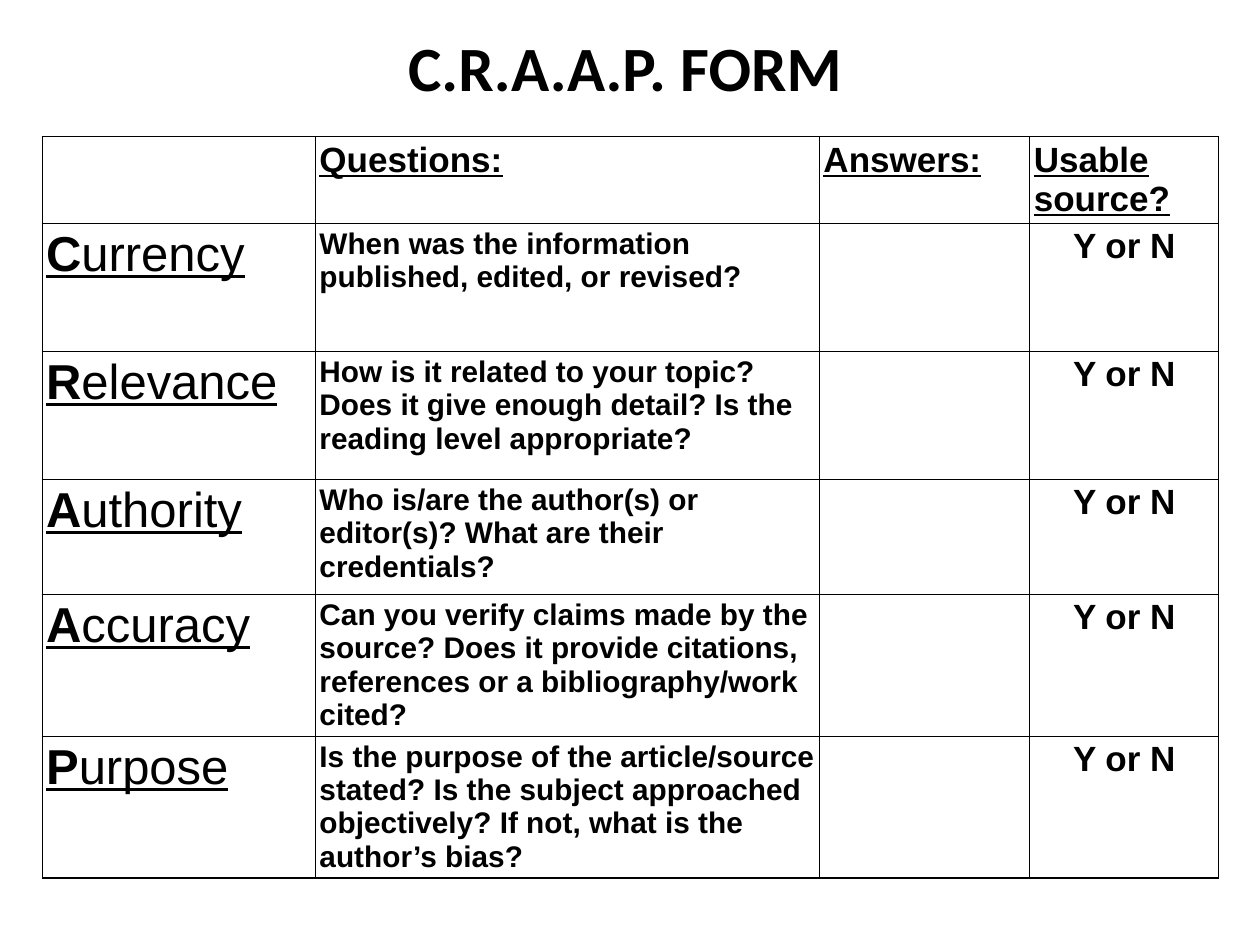
from lxml.etree import SubElement
from pptx import Presentation
from pptx.dml.color import RGBColor
from pptx.enum.text import MSO_ANCHOR, PP_ALIGN
from pptx.oxml.ns import qn
from pptx.util import Cm, Pt

BLACK = RGBColor(0x00, 0x00, 0x00)

TITLE = dict(name="Calibri", size=Pt(36), bold=True, underline=False)
HEADER = dict(name="Arial", size=Pt(20), bold=True, underline=True)
INITIAL = dict(HEADER, size=Pt(28))
REST = dict(INITIAL, bold=False)
QUESTION = dict(HEADER, size=Pt(17), underline=False)
CHOICE = dict(HEADER, underline=False)

COLS = (5.51, 10.16, 4.24, 3.81)
ROWS = (1.75, 2.58, 2.58, 2.32, 2.86, 2.86)
HEADERS = ("", "Questions:", "Answers:", "Usable source?")
CRITERIA = (
    ("Currency", "When was the information published, edited, or revised?"),
    ("Relevance", "How is it related to your topic? Does it give enough detail? "
                  "Is the reading level appropriate?"),
    ("Authority", "Who is/are the author(s) or editor(s)? What are their credentials?"),
    ("Accuracy", "Can you verify claims made by the source? Does it provide citations, "
                 "references or a bibliography/work cited?"),
    ("Purpose", "Is the purpose of the article/source stated? Is the subject approached "
                "objectively? If not, what is the author’s bias?"),
)


class FormSlide:
    """Draws the elements of an evaluation form on one slide in one style."""

    def __init__(self, prs, color=BLACK, margin=0.08, border=0.75):
        self.s = prs.slides.add_slide(prs.slide_layouts[5])
        self.color, self.margin, self.border = color, Cm(margin), Pt(border)

    def text(self, tf, runs, align=PP_ALIGN.LEFT):
        p = tf.paragraphs[0]
        p.alignment = align
        for text, style in runs:
            r = p.add_run()
            r.text = text
            for key, value in style.items():
                setattr(r.font, key, value)
            r.font.color.rgb = self.color

    def title(self, text, x, y, w, h):
        sp = self.s.shapes.title
        sp.left, sp.top, sp.width, sp.height = map(Cm, (x, y, w, h))
        sp.text_frame.vertical_anchor = MSO_ANCHOR.MIDDLE
        self.text(sp.text_frame, [(text, TITLE)], PP_ALIGN.CENTER)

    def table(self, x, y, cols, rows):
        frame = self.s.shapes.add_table(len(rows), len(cols), Cm(x), Cm(y),
                                        Cm(sum(cols)), Cm(sum(rows)))
        tbl = frame.table
        tbl.first_row = tbl.horz_banding = False
        for col, width in zip(tbl.columns, cols):
            col.width = Cm(width)
        for row, height in zip(tbl.rows, rows):
            row.height = Cm(height)
        for cell in tbl.iter_cells():
            self.frame_cell(cell)
        return tbl

    def frame_cell(self, cell):
        for side in ("left", "right", "top", "bottom"):
            setattr(cell, f"margin_{side}", self.margin)
        tcPr = cell._tc.get_or_add_tcPr()
        for tag in ("a:lnL", "a:lnR", "a:lnT", "a:lnB"):
            ln = SubElement(tcPr, qn(tag), w=str(self.border))
            fill = SubElement(ln, qn("a:solidFill"))
            SubElement(fill, qn("a:srgbClr"), val=str(self.color))
        cell.fill.background()


def main():
    prs = Presentation()
    prs.slide_width, prs.slide_height = Cm(25.4), Cm(19.05)
    form = FormSlide(prs)
    form.title("C.R.A.A.P. FORM", 0.85, 0.43, 23.5, 1.8)
    tbl = form.table(0.85, 2.75, COLS, ROWS)
    for i, text in enumerate(HEADERS):
        if text:
            form.text(tbl.cell(0, i).text_frame, [(text, HEADER)])
    for i, (name, question) in enumerate(CRITERIA, 1):
        form.text(tbl.cell(i, 0).text_frame, [(name[0], INITIAL), (name[1:], REST)])
        form.text(tbl.cell(i, 1).text_frame, [(question, QUESTION)])
        form.text(tbl.cell(i, 3).text_frame, [("Y or N", CHOICE)], PP_ALIGN.CENTER)
    prs.save("out.pptx")


if __name__ == "__main__":
    main()
